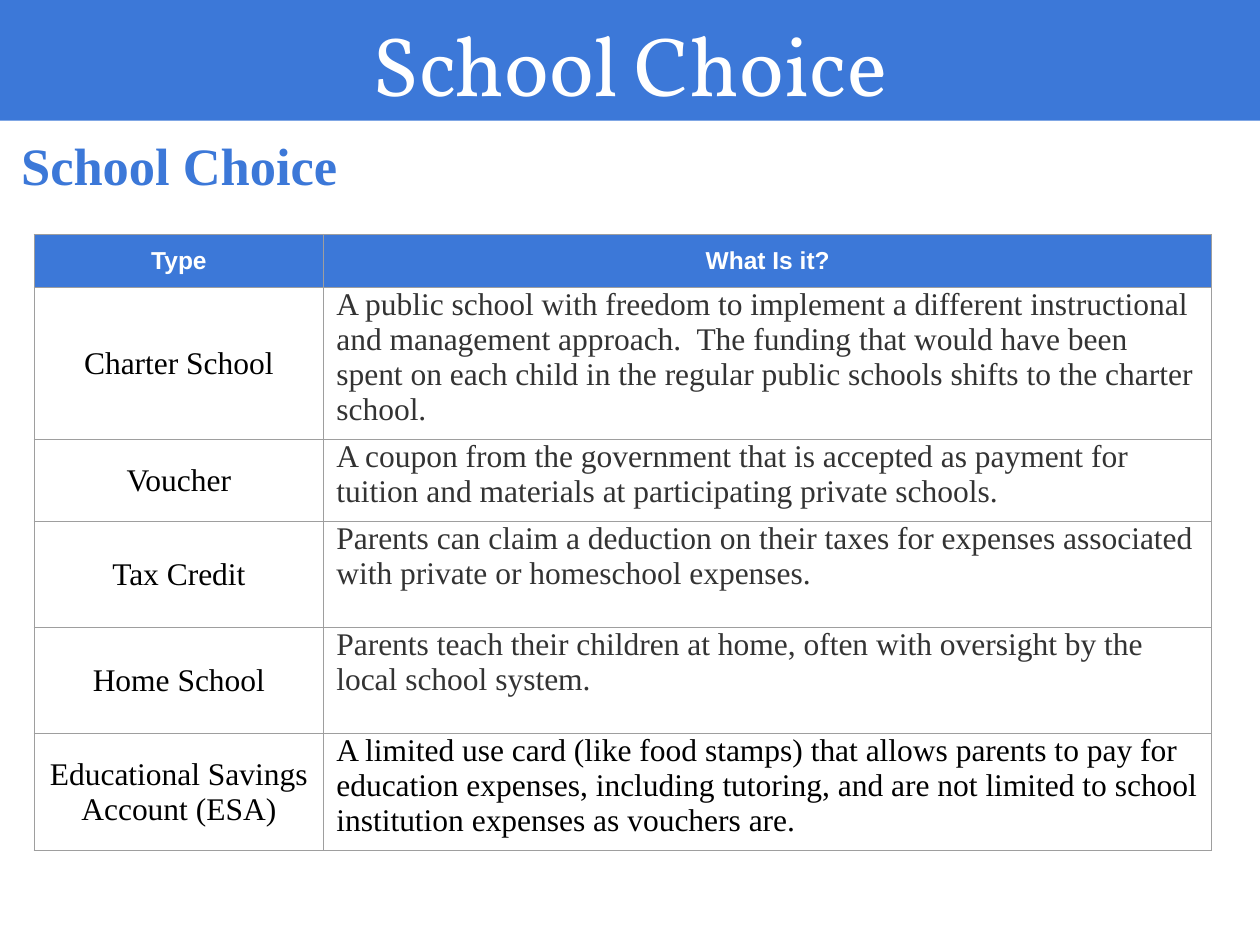
"""Build a slide that compares the types of school choice in a table."""
from lxml import etree
from pptx import Presentation
from pptx.dml.color import RGBColor
from pptx.enum.text import MSO_ANCHOR, MSO_AUTO_SIZE, PP_ALIGN
from pptx.oxml.ns import qn
from pptx.util import Pt

CENTER, LEFT = PP_ALIGN.CENTER, PP_ALIGN.LEFT
TOP, MIDDLE = MSO_ANCHOR.TOP, MSO_ANCHOR.MIDDLE
NO_AUTOFIT = MSO_AUTO_SIZE.NONE
BLUE = RGBColor(0x3C, 0x78, 0xD8)
WHITE = RGBColor(0xFF, 0xFF, 0xFF)
BLACK = RGBColor(0x00, 0x00, 0x00)
DARK_GRAY = RGBColor(0x33, 0x33, 0x33)
BORDER_GRAY = RGBColor(0x9E, 0x9E, 0x9E)
INSET = Pt(7.2)
SERIF = "Times New Roman"

HEADINGS = ["Type", "What Is it?"]
CHOICES = [
    ("Charter School", "A public school with freedom to implement a different instructional and management approach.  The funding that would have been spent on each child in the regular public schools shifts to the charter school."),
    ("Voucher", "A coupon from the government that is accepted as payment for tuition and materials at participating private schools."),
    ("Tax Credit", "Parents can claim a deduction on their taxes for expenses associated with private or homeschool expenses."),
    ("Home School", "Parents teach their children at home, often with oversight by the local school system."),
    ("Educational Savings Account (ESA)", "A limited use card (like food stamps) that allows parents to pay for education expenses, including tutoring, and are not limited to school institution expenses as vouchers are."),
]
COLUMN_WIDTHS = [165.5, 507.5]
ROW_HEIGHTS = [27.5, 58.5, 41.5, 60.5, 60.5, 51]


def write_text(frame, text, font_name, size, color, bold=False, alignment=LEFT):
    frame.word_wrap = True
    paragraph = frame.paragraphs[0]
    paragraph.text = text
    paragraph.alignment = alignment
    font = paragraph.font
    font.name, font.size, font.bold = font_name, Pt(size), bold
    font.color.rgb = color
    return paragraph


def add_borders(cell):
    properties = cell._tc.get_or_add_tcPr()
    for position, side in enumerate(["a:lnL", "a:lnR", "a:lnT", "a:lnB"]):
        line = etree.Element(qn(side), w=str(Pt(0.75)))
        fill = etree.SubElement(line, qn("a:solidFill"))
        etree.SubElement(fill, qn("a:srgbClr"), val=str(BORDER_GRAY))
        properties.insert(position, line)


presentation = Presentation()
presentation.slide_width, presentation.slide_height = Pt(720), Pt(540)
slide = presentation.slides.add_slide(presentation.slide_layouts[5])

title = slide.shapes.title
title.left, title.top, title.width, title.height = Pt(0), Pt(0), Pt(720), Pt(69)
title.fill.solid()
title.fill.fore_color.rgb = BLUE
write_text(title.text_frame, "School Choice", "Vollkorn", 48, WHITE, alignment=CENTER)

subtitle = slide.shapes.add_textbox(Pt(5), Pt(69), Pt(711), Pt(464))
paragraph = write_text(subtitle.text_frame, "School Choice", SERIF, 30, BLUE, bold=True)
paragraph.space_before = Pt(10.5)

for shape in (title, subtitle):
    frame = shape.text_frame
    frame.auto_size = NO_AUTOFIT
    frame.vertical_anchor = TOP
    frame.margin_left = frame.margin_right = frame.margin_top = frame.margin_bottom = INSET

table = slide.shapes.add_table(
    len(ROW_HEIGHTS), len(COLUMN_WIDTHS), Pt(19.5), Pt(134), Pt(sum(COLUMN_WIDTHS)), Pt(sum(ROW_HEIGHTS))
).table
table.horz_banding = False
for column, width in zip(table.columns, COLUMN_WIDTHS):
    column.width = Pt(width)
for row, height in zip(table.rows, ROW_HEIGHTS):
    row.height = Pt(height)

for cell in table.iter_cells():
    cell.margin_left = cell.margin_right = cell.margin_top = cell.margin_bottom = INSET
    cell.fill.background()
    add_borders(cell)

for cell, heading in zip(table.rows[0].cells, HEADINGS):
    cell.fill.solid()
    cell.fill.fore_color.rgb = BLUE
    write_text(cell.text_frame, heading, "Arial", 14, WHITE, bold=True, alignment=CENTER)

for row_index, (choice, description) in enumerate(CHOICES, start=1):
    type_cell, description_cell = table.rows[row_index].cells
    type_cell.vertical_anchor = MIDDLE
    write_text(type_cell.text_frame, choice, SERIF, 18, BLACK, alignment=CENTER)
    description_cell.margin_top = Pt(0)
    is_last = row_index == len(CHOICES)
    color = BLACK if is_last else DARK_GRAY
    paragraph = write_text(description_cell.text_frame, description, SERIF, 18, color)
    if not is_last:
        paragraph.space_before = Pt(10.5)

presentation.save("out.pptx")
